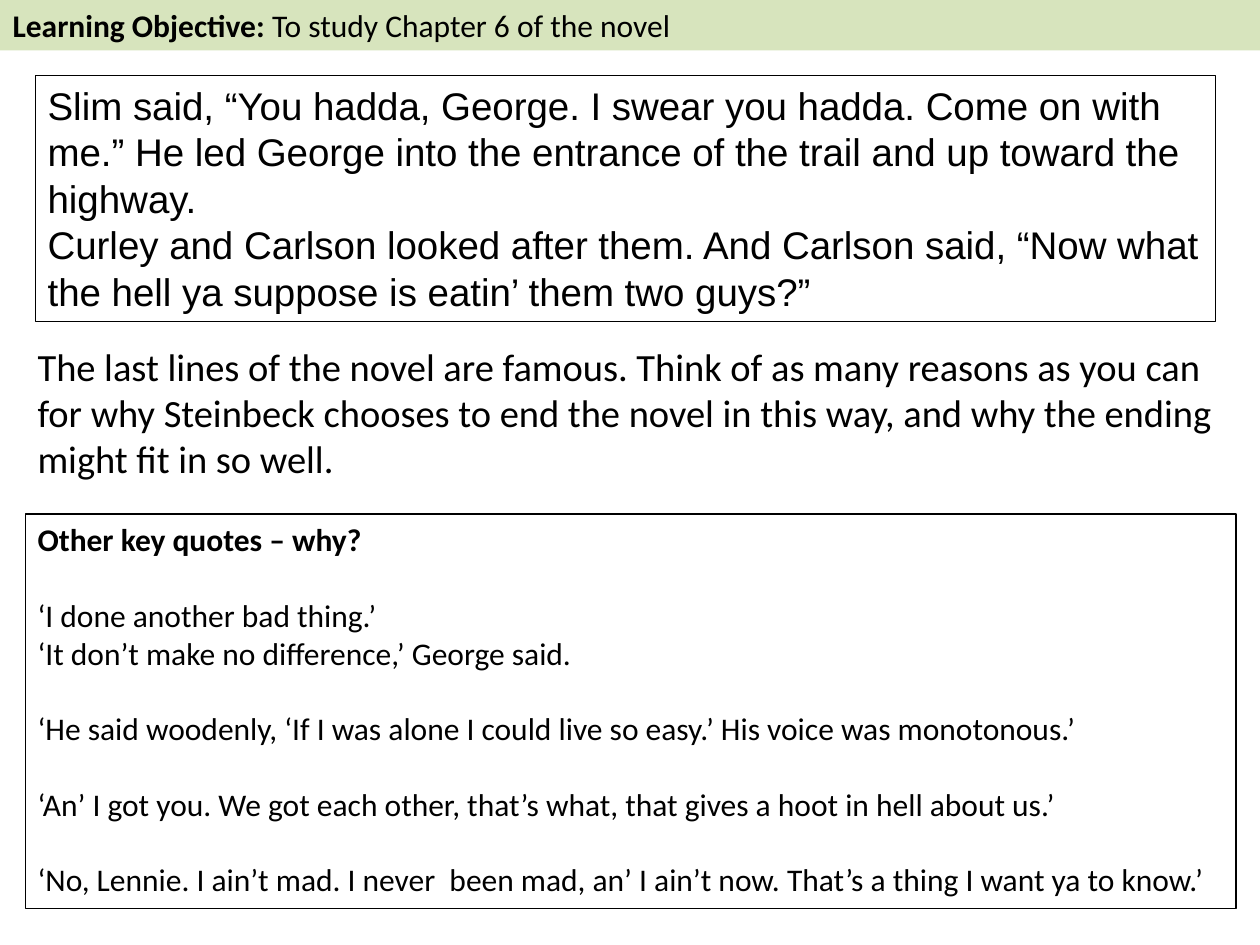
from pptx import Presentation
from pptx.dml.color import RGBColor
from pptx.enum import shapes, text
from pptx.util import Inches, Pt

BLACK = RGBColor(0, 0, 0)
PALE_GREEN = RGBColor(0xD7, 0xE4, 0xBD)

ENDING = [
    "Slim said, “You hadda, George. I swear you hadda. Come on with me.” "
    "He led George into the entrance of the trail and up toward the highway.",
    "Curley and Carlson looked after them. And Carlson said, "
    "“Now what the hell ya suppose is eatin’ them two guys?”",
]
TASK = [
    "The last lines of the novel are famous. Think of as many reasons as you can "
    "for why Steinbeck chooses to end the novel in this way, "
    "and why the ending might fit in so well."
]
QUOTE_GROUPS = [
    ["Other key quotes – why?"],
    ["‘I done another bad thing.’", "‘It don’t make no difference,’ George said."],
    ["‘He said woodenly, ‘If I was alone I could live so easy.’ His voice was monotonous.’"],
    ["‘An’ I got you. We got each other, that’s what, that gives a hoot in hell about us.’"],
    ["‘No, Lennie. I ain’t mad. I never  been mad, an’ I ain’t now. "
     "That’s a thing I want ya to know.’"],
]


def style_paragraph(para, size, font="Calibri", bold=False):
    """Left-align a paragraph and set its font."""
    para.alignment = text.PP_ALIGN.LEFT
    para.font.name = font
    para.font.size = Pt(size)
    para.font.bold = bold
    para.font.color.rgb = BLACK


def set_frame(shape):
    """Wrap the text of a shape from its top edge."""
    frame = shape.text_frame
    frame.word_wrap = True
    frame.auto_size = text.MSO_AUTO_SIZE.NONE
    frame.vertical_anchor = text.MSO_ANCHOR.TOP
    return frame


def fill_text(shape, lines, size, font="Calibri"):
    """Write one paragraph per line and return the paragraphs."""
    frame = set_frame(shape)
    frame.text = "\n".join(lines)
    for para in frame.paragraphs:
        style_paragraph(para, size, font)
    return frame.paragraphs


def add_outlined_box(page, left, top, width, height):
    """Add an unfilled rectangle with a thin black outline."""
    box = page.shapes.add_shape(
        shapes.MSO_SHAPE.RECTANGLE,
        Inches(left), Inches(top), Inches(width), Inches(height))
    box.shadow.inherit = False
    box.fill.background()
    box.line.color.rgb = BLACK
    box.line.width = Pt(0.75)
    return box


def set_objective(page, width):
    """Turn the title into the learning objective bar."""
    title = page.shapes.title
    title.left, title.top = Inches(0), Inches(0)
    title.width, title.height = width, Inches(0.4)
    title.fill.solid()
    title.fill.fore_color.rgb = PALE_GREEN
    para = set_frame(title).paragraphs[0]
    label = para.add_run()
    label.text = "Learning Objective: "
    label.font.bold = True
    para.add_run().text = "To study Chapter 6 of the novel"
    style_paragraph(para, 18)


def add_ending(page):
    """Add the closing lines of the novel."""
    box = add_outlined_box(page, 0.28, 0.6, 9.37, 1.95)
    for para in fill_text(box, ENDING, 22, "Arial"):
        para.line_spacing = Pt(26.5)


def add_task(page):
    """Add the discussion task."""
    box = page.shapes.add_textbox(
        Inches(0.2), Inches(2.67), Inches(9.53), Inches(1.21))
    fill_text(box, TASK, 22)


def add_quotes(page):
    """Add the key quotes, with a line of space between groups."""
    box = add_outlined_box(page, 0.2, 4.08, 9.61, 3.13)
    lines = [line for group in QUOTE_GROUPS for line in group]
    paras = fill_text(box, lines, 18)
    paras[0].font.bold = True
    group_starts = [group[0] for group in QUOTE_GROUPS[1:]]
    for para in paras:
        if para.text in group_starts:
            para.space_before = Pt(21.6)


def main():
    """Build and save the slide."""
    deck = Presentation()
    deck.slide_width, deck.slide_height = Inches(10), Inches(7.5)
    page = deck.slides.add_slide(deck.slide_layouts[5])
    set_objective(page, deck.slide_width)
    add_task(page)
    add_ending(page)
    add_quotes(page)
    deck.save("out.pptx")


if __name__ == "__main__":
    main()
